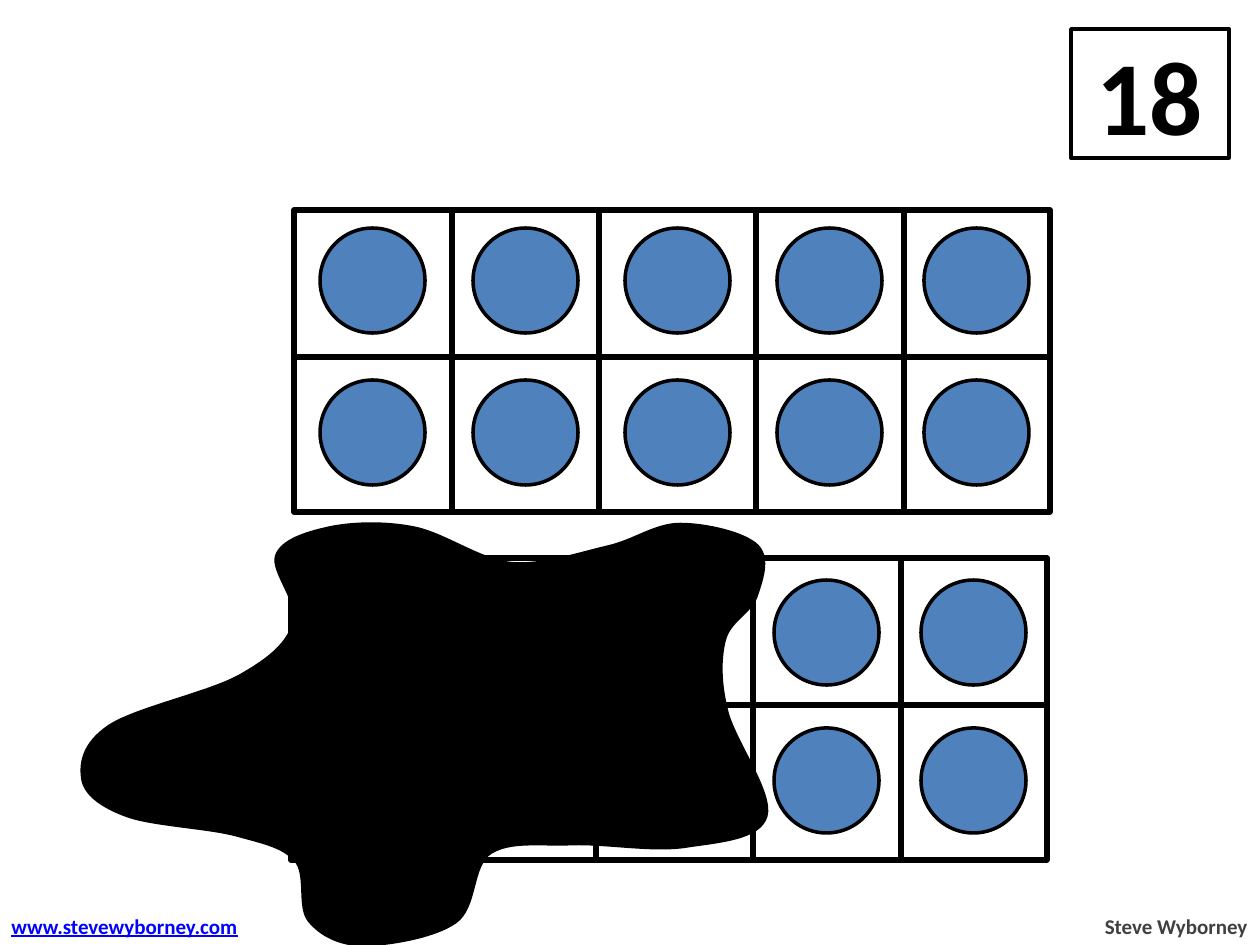
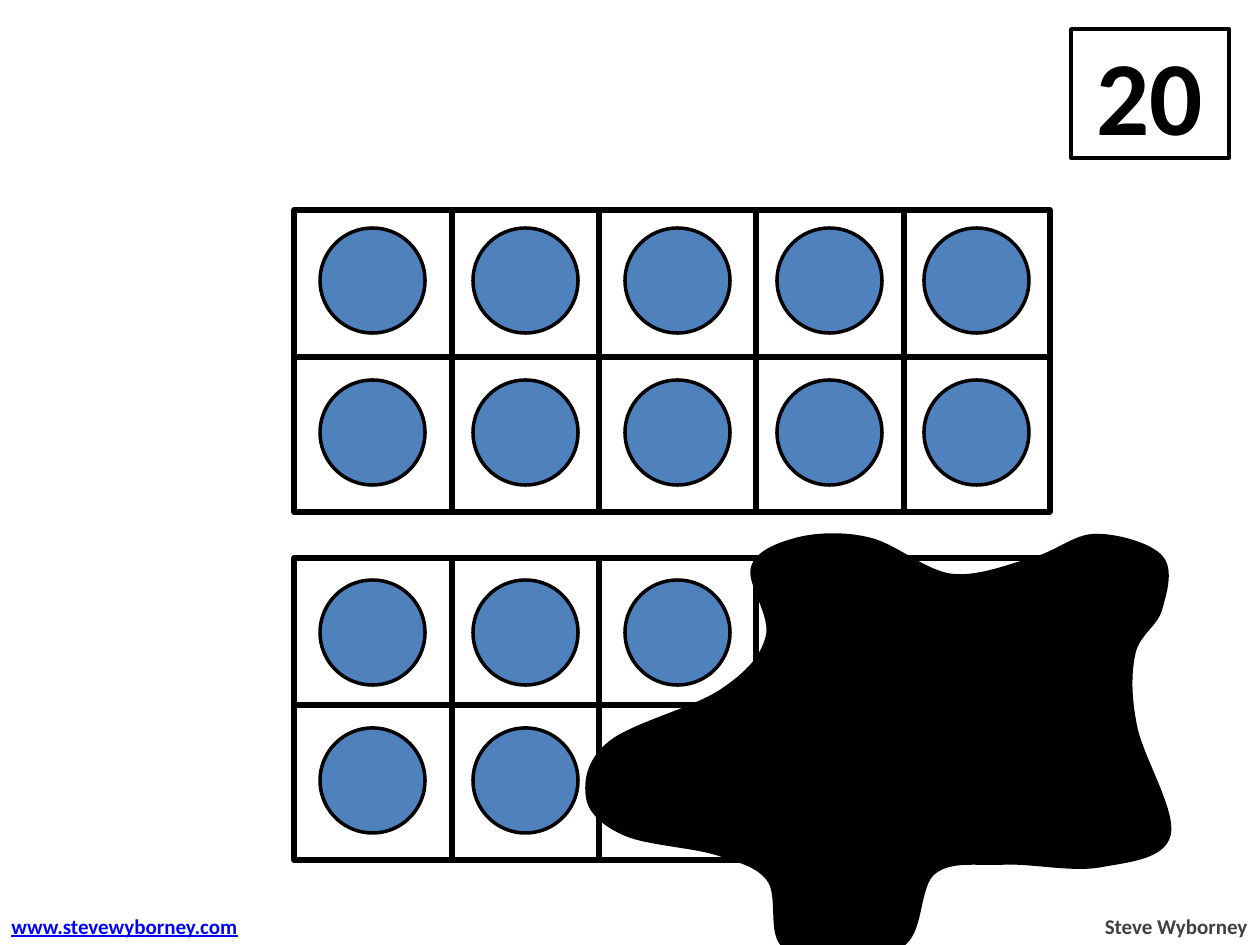
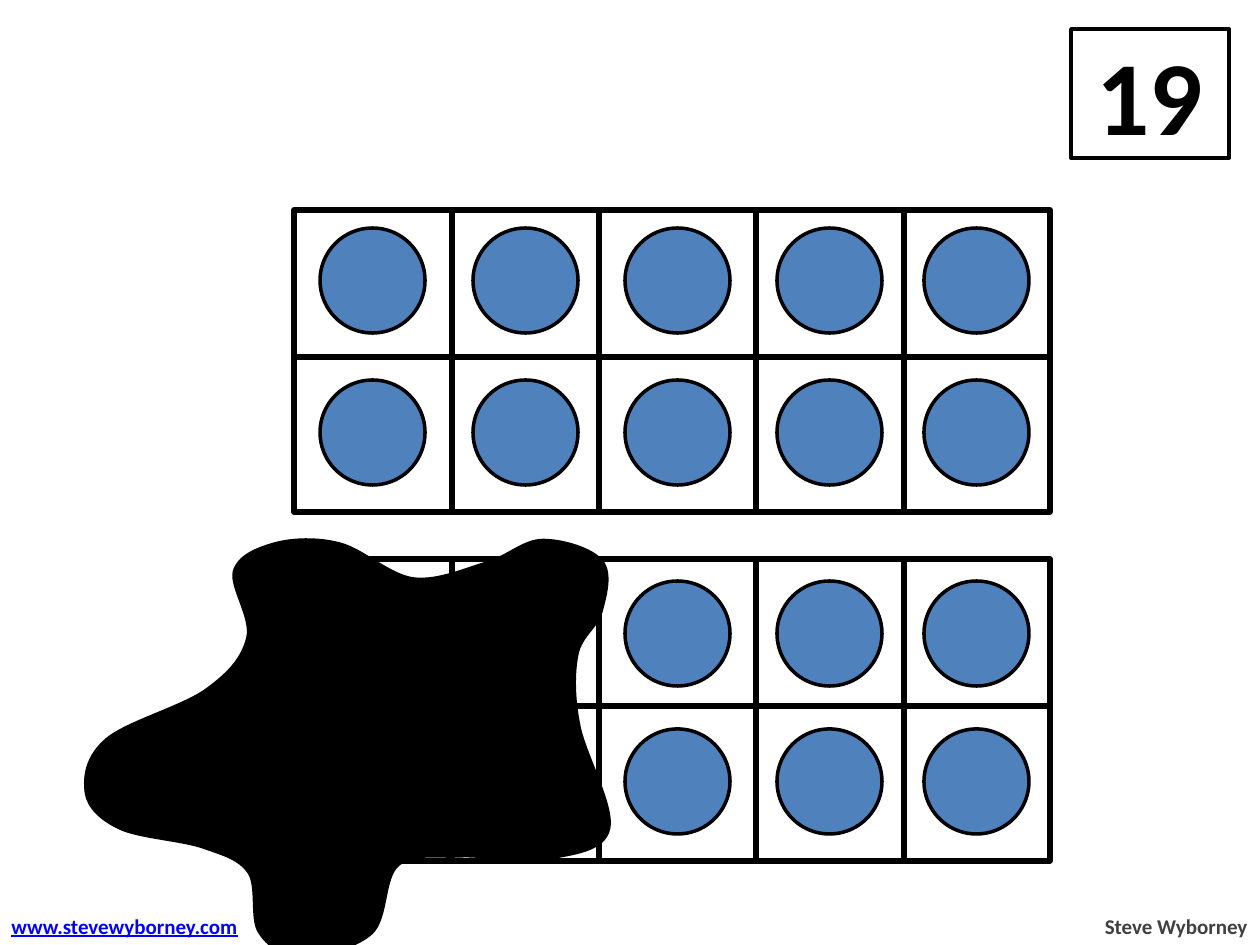
"""Build three ten-frame slides on which an ink blot covers part of the lower frame."""
from itertools import pairwise, product

from lxml import etree
from pptx import Presentation
from pptx.dml.color import RGBColor
from pptx.enum.shapes import MSO_CONNECTOR, MSO_SHAPE
from pptx.enum.text import MSO_ANCHOR, MSO_AUTO_SIZE, PP_ALIGN
from pptx.oxml.ns import qn
from pptx.util import Pt

PX = 914400 // 126
RECT, OVAL, LINE = MSO_SHAPE.RECTANGLE, MSO_SHAPE.OVAL, MSO_CONNECTOR.STRAIGHT
LEFT, MID, RIGHT = PP_ALIGN.LEFT, PP_ALIGN.CENTER, PP_ALIGN.RIGHT
MIDDLE, FIXED = MSO_ANCHOR.MIDDLE, MSO_AUTO_SIZE.NONE
COLORS = {"ink": "000000", "disc": "4F81BD", "paper": "FFFFFF", "link": "0000FF", "name": "404040"}
BIG = {"name": "Calibri", "size": Pt(60), "bold": True, "underline": False}
SMALL = {**BIG, "size": Pt(12)}
LINK = {**SMALL, "underline": True}

TOTAL_BOX = (1071, 29, 158, 129)
FEET = [
    ("Steve Wyborney", (1085, 907, 175, 38), RIGHT, SMALL, "name"),
    ("www.stevewyborney.com", (-1, 907, 258, 38), LEFT, LINK, "link"),
]

DISC, WIDE, HIGH, HALF = 105, 756, 302, 147
EDGES = [0, 158, 305, 462, 610, WIDE]
CELLS = list(product(range(2), range(5)))
UPPER = {"left": 294, "top": 210, "drops": (18, 170), "empty": []}
LOWER = {"left": 294, "top": 558, "drops": (22, 170), "empty": []}

SLIDES = [
    {"total": "18", "blot": (217, 388, 420, 693),
     "lower": {**LOWER, "left": 291, "empty": [(0, 2), (1, 2)]}},
    {"total": "20", "blot": (665, 456, 431, 590), "lower": LOWER},
    {"total": "19", "blot": (142, 483, 415, 530),
     "lower": {**LOWER, "top": 559, "empty": [(1, 0)]}},
]

BLOT_W, BLOT_H = 333, 551
KNOTS = [
    (102, 38), (131, 2), (173, 23), (213, 127), (255, 170), (308, 156),
    (330, 197), (330, 266), (302, 343), (315, 419), (333, 477), (316, 538),
    (276, 537), (242, 512), (184, 514), (102, 545), (78, 481), (80, 391),
    (73, 326), (18, 298), (0, 225), (19, 182), (67, 171), (87, 124),
]


def paint(shape, fill, width):
    """Give a shape a flat fill, or none, and an ink outline."""
    if fill:
        shape.fill.solid()
        shape.fill.fore_color.rgb = RGBColor.from_string(COLORS[fill])
    else:
        shape.fill.background()
    shape.line.color.rgb = RGBColor.from_string(COLORS["ink"])
    shape.line.width = Pt(width)


def write(shape, text, align, form, color):
    """Put one formatted line of text into a shape."""
    frame = shape.text_frame
    frame.word_wrap = True
    frame.auto_size = FIXED
    para = frame.paragraphs[0]
    para.alignment = align
    run = para.add_run()
    run.text = text
    for key, value in form.items():
        setattr(run.font, key, value)
    run.font.color.rgb = RGBColor.from_string(COLORS[color])


slopes = []
for i in range(len(KNOTS)):
    before, after = KNOTS[i - 1], KNOTS[(i + 1) % len(KNOTS)]
    slopes.append(((after[0] - before[0]) / 6, (after[1] - before[1]) / 6))

curves = []
joints = list(zip(KNOTS, slopes))
for ((x, y), (dx, dy)), ((next_x, next_y), (next_dx, next_dy)) in pairwise(joints + joints[:1]):
    leave = (round(x + dx), round(y + dy))
    arrive = (round(next_x - next_dx), round(next_y - next_dy))
    curves += [leave, arrive, (next_x, next_y)]

deck = Presentation()
deck.slide_width, deck.slide_height = 1260 * PX, 945 * PX

for page in SLIDES:
    slide = deck.slides.add_slide(deck.slide_layouts[5])
    title = slide.shapes.title
    title.left, title.top, title.width, title.height = [n * PX for n in TOTAL_BOX]
    paint(title, "paper", 2)
    write(title, page["total"], MID, BIG, "ink")
    title.text_frame.vertical_anchor = MIDDLE

    for grid in (UPPER, page["lower"]):
        left, top = grid["left"], grid["top"]
        group = slide.shapes.add_group_shape().shapes

        for row, col in CELLS:
            if (row, col) in grid["empty"]:
                continue
            x = left + (EDGES[col] + EDGES[col + 1] - DISC) // 2
            y = top + grid["drops"][row]
            disc = group.add_shape(OVAL, x * PX, y * PX, DISC * PX, DISC * PX)
            disc.shadow.inherit = False
            paint(disc, "disc", 2)

        border = group.add_shape(RECT, left * PX, top * PX, WIDE * PX, HIGH * PX)
        border.shadow.inherit = False
        paint(border, None, 3)

        rules = [(left + edge, top, left + edge, top + HIGH) for edge in EDGES[1:-1]]
        rules.append((left + 3, top + HALF, left + 3 + WIDE, top + HALF))
        for ends in rules:
            rule = group.add_connector(LINE, *[n * PX for n in ends])
            rule.line.color.rgb = RGBColor.from_string(COLORS["ink"])
            rule.line.width = Pt(3)
            etree.SubElement(rule._element.spPr, qn("a:effectLst"))

    pen = slide.shapes.build_freeform(*KNOTS[0], scale=1.0)
    pen.add_line_segments(curves, close=True)
    blot = pen.convert_to_shape()
    blot.shadow.inherit = False
    paint(blot, "ink", 2)
    trace = next(blot._element.iter(qn("a:path")))
    trace.set("w", str(BLOT_W))
    trace.set("h", str(BLOT_H))
    steps = trace.findall(qn("a:lnTo"))
    for i in range(0, len(steps), 3):
        curve = etree.Element(qn("a:cubicBezTo"))
        steps[i].addprevious(curve)
        for step in steps[i:i + 3]:
            curve.append(step[0])
            trace.remove(step)
    blot.left, blot.top, blot.width, blot.height = [n * PX for n in page["blot"]]
    blot.rotation = 270

    for text, box, align, form, color in FEET:
        foot = slide.shapes.add_textbox(*[n * PX for n in box])
        write(foot, text, align, form, color)

deck.save("out.pptx")
